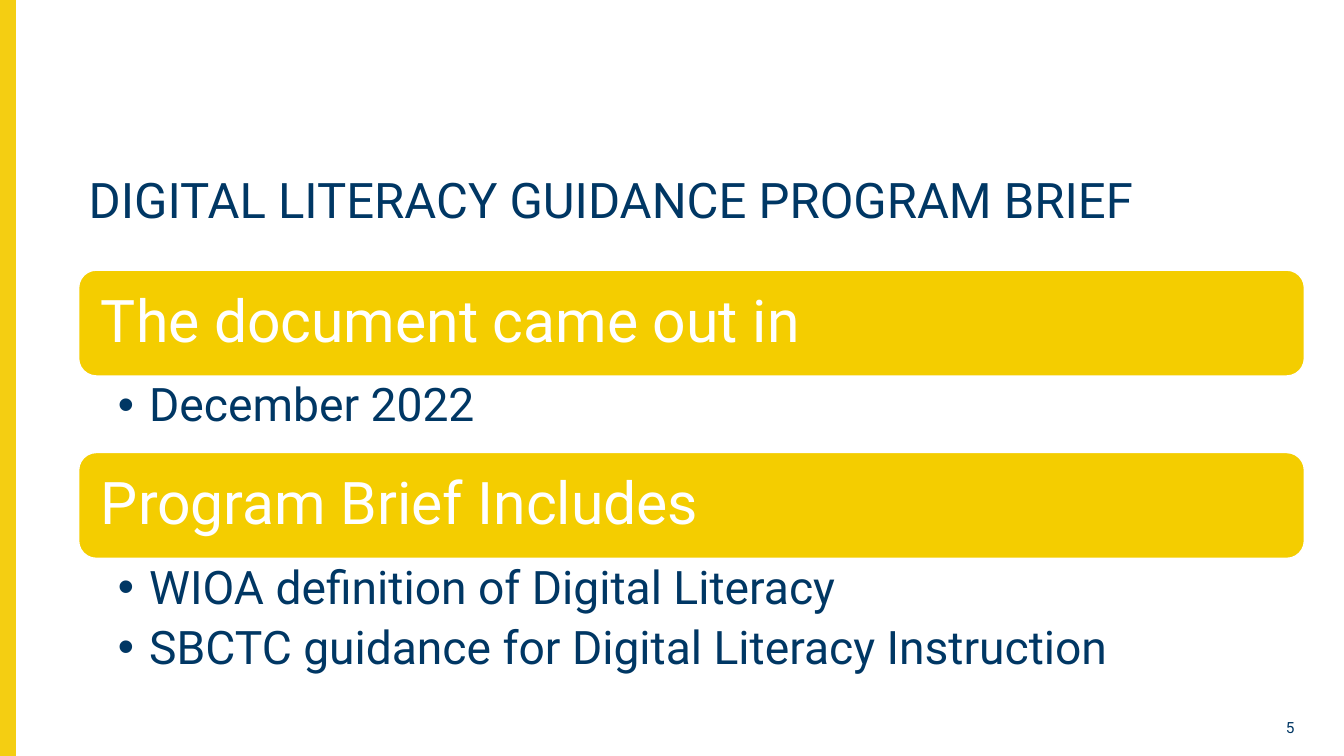
from dataclasses import dataclass

from lxml.etree import SubElement
from pptx import Presentation
from pptx.dml.color import RGBColor
from pptx.enum.shapes import MSO_SHAPE
from pptx.enum.text import MSO_ANCHOR, MSO_AUTO_SIZE, PP_ALIGN
from pptx.oxml.ns import qn
from pptx.slide import Slide
from pptx.text.text import TextFrame, _Paragraph
from pptx.util import Inches, Pt

COLORS = {"navy": "003764", "gold": "F4CD00", "edge": "F4CE12", "white": "FFFFFF"}
FONT = "Roboto"
SLIDE_WIDTH, SLIDE_HEIGHT = Inches(13.33), Inches(7.5)

# Percentages of the slide's width or height
CONTENT_LEFT, CONTENT_WIDTH = 5.85, 91.2
SECTIONS_TOP, HEADING_HEIGHT = 35.73, 14


@dataclass(frozen=True)
class Section:
    heading: str
    items: tuple[str, ...]
    list_height: float


SECTIONS = (
    Section("The document came out in", ("December 2022",), 10.13),
    Section(
        "Program Brief Includes",
        (
            "WIOA definition of Digital Literacy",
            "SBCTC guidance for Digital Literacy Instruction",
        ),
        15.47,
    ),
)


def area(left: float, top: float, width: float, height: float) -> tuple[int, ...]:
    """Turn percentages of the slide into a left, top, width and height."""
    return (
        round(SLIDE_WIDTH * left / 100),
        round(SLIDE_HEIGHT * top / 100),
        round(SLIDE_WIDTH * width / 100),
        round(SLIDE_HEIGHT * height / 100),
    )


def place(shape, box: tuple[int, ...]) -> None:
    shape.left, shape.top, shape.width, shape.height = box


def set_frame(frame: TextFrame, anchor: MSO_ANCHOR, left: float = 0.1,
              right: float = 0.1, vertical: float = 0.05) -> None:
    """Set the anchor and the margins in inches, with wrapping and no autofit."""
    frame.word_wrap = True
    frame.auto_size = MSO_AUTO_SIZE.NONE
    frame.vertical_anchor = anchor
    frame.margin_left, frame.margin_right = Inches(left), Inches(right)
    frame.margin_top = frame.margin_bottom = Inches(vertical)


def write(paragraph: _Paragraph, text: str, size: float, color: str,
          alignment: PP_ALIGN = PP_ALIGN.LEFT, line_spacing: float = 0.9) -> None:
    paragraph.alignment = alignment
    paragraph.line_spacing = line_spacing
    paragraph.space_before = Pt(0)
    run = paragraph.add_run()
    run.text = text
    run.font.name = FONT
    run.font.size = Pt(size)
    run.font.color.rgb = RGBColor.from_string(COLORS[color])


def add_block(slide: Slide, kind: MSO_SHAPE, box: tuple[int, ...], fill: str, line: str):
    block = slide.shapes.add_shape(kind, *box)
    block.shadow.inherit = False
    block.fill.solid()
    block.fill.fore_color.rgb = RGBColor.from_string(COLORS[fill])
    block.line.color.rgb = RGBColor.from_string(COLORS[line])
    block.line.width = Pt(1)
    return block


def add_bullet(paragraph: _Paragraph) -> None:
    properties = paragraph._p.get_or_add_pPr()
    indent = Inches(0.31)
    properties.set("marL", str(indent))
    properties.set("indent", str(-indent))
    SubElement(properties, qn("a:buChar")).set("char", "•")


def add_title(slide: Slide) -> None:
    title = slide.shapes.title
    place(title, area(CONTENT_LEFT, 22.67, CONTENT_WIDTH, 11.6))
    set_frame(title.text_frame, MSO_ANCHOR.TOP)
    write(title.text_frame.paragraphs[0],
          "DIGITAL LITERACY GUIDANCE PROGRAM BRIEF", 35, "navy")


def add_section(slide: Slide, section: Section, list_placeholder, top: float) -> None:
    heading = add_block(slide, MSO_SHAPE.ROUNDED_RECTANGLE,
                        area(CONTENT_LEFT, top, CONTENT_WIDTH, HEADING_HEIGHT),
                        "gold", "white")
    set_frame(heading.text_frame, MSO_ANCHOR.MIDDLE, 0.17, 0.17, 0.17)
    write(heading.text_frame.paragraphs[0], section.heading, 42, "white")

    place(list_placeholder, area(CONTENT_LEFT, top + HEADING_HEIGHT,
                                 CONTENT_WIDTH, section.list_height))
    frame = list_placeholder.text_frame
    set_frame(frame, MSO_ANCHOR.TOP, 0.39, 0.33, 0.06)
    for index, item in enumerate(section.items):
        paragraph = frame.add_paragraph() if index else frame.paragraphs[0]
        paragraph.level = 1
        add_bullet(paragraph)
        paragraph.space_after = Pt(7)
        write(paragraph, item, 33, "navy")


def add_page_number(slide: Slide) -> None:
    box = slide.shapes.add_textbox(*area(91.95, 94.5, 5.1, 3.5))
    set_frame(box.text_frame, MSO_ANCHOR.MIDDLE)
    write(box.text_frame.paragraphs[0], "5", 11, "navy", PP_ALIGN.RIGHT, 1.0)


def main() -> None:
    presentation = Presentation()
    presentation.slide_width, presentation.slide_height = SLIDE_WIDTH, SLIDE_HEIGHT
    two_content_layout = presentation.slide_layouts[3]
    slide = presentation.slides.add_slide(two_content_layout)

    add_block(slide, MSO_SHAPE.RECTANGLE, area(0, 0, 1.13, 100), "edge", "edge")
    add_title(slide)
    top = SECTIONS_TOP
    for index, section in enumerate(SECTIONS, start=1):
        add_section(slide, section, slide.placeholders[index], top)
        top += HEADING_HEIGHT + section.list_height
    add_page_number(slide)
    presentation.save("out.pptx")


if __name__ == "__main__":
    main()
